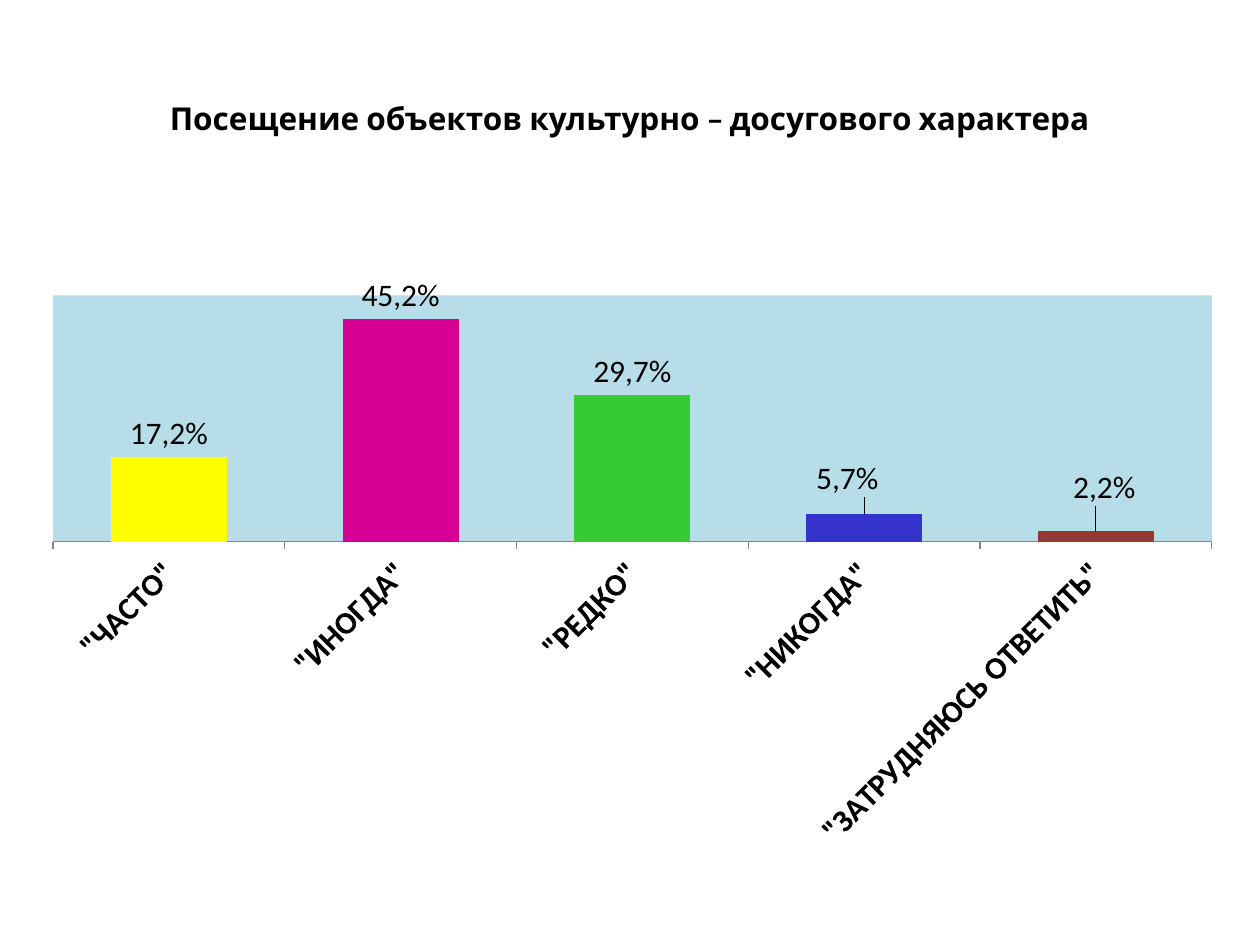
import pptx
import pptx.chart.data
import pptx.dml.color
import pptx.enum.chart
import pptx.enum.text
import pptx.oxml
import pptx.oxml.ns
import pptx.util

COLOURS = {
    "text": "000000",
    "axis": "868686",
    "plot": "B7DEE8",
    "series": "4F81BD",
}
ANSWERS = [
    ('"ЧАСТО"', 0.172, "FFFF00", None),
    ('"ИНОГДА"', 0.452, "D60093", None),
    ('"РЕДКО"', 0.297, "33CC33", None),
    ('"НИКОГДА"', 0.057, "3333CC", (-0.014, -0.02)),
    ('"ЗАТРУДНЯЮСЬ ОТВЕТИТЬ"', 0.022, "953735", (0.007, -0.034)),
]


class SlideBuilder:
    """Holds the style and the current slide, placing elements by shares of its size."""

    def __init__(self, presentation):
        self.width = presentation.slide_width
        self.height = presentation.slide_height
        self.slide = presentation.slides.add_slide(presentation.slide_layouts[5])

    def place(self, left, top, width, height):
        return (int(left * self.width), int(top * self.height),
                int(width * self.width), int(height * self.height))

    def colour(self, value):
        return pptx.dml.color.RGBColor.from_string(value)

    def fill(self, format, value):
        format.fill.solid()
        format.fill.fore_color.rgb = self.colour(value)

    def style(self, font, name, size, bold):
        font.name = name
        font.size = pptx.util.Pt(size)
        font.bold = bold
        font.color.rgb = self.colour(COLOURS["text"])

    def title(self, text, area):
        shape = self.slide.shapes.title
        shape.left, shape.top, shape.width, shape.height = self.place(*area)
        text_frame = shape.text_frame
        text_frame.text = text
        text_frame.vertical_anchor = pptx.enum.text.MSO_ANCHOR.MIDDLE
        paragraph = text_frame.paragraphs[0]
        paragraph.alignment = pptx.enum.text.PP_ALIGN.CENTER
        self.style(paragraph.runs[0].font, "Cabin", 18, True)

    def layout(self, x, y, width=None, height=None):
        values = {"x": x, "y": y}
        modes = ""
        if width is not None:
            values.update(w=width, h=height)
            modes = ('<c:layoutTarget val="inner"/>'
                     '<c:xMode val="edge"/><c:yMode val="edge"/>')
        lengths = "".join(f'<c:{key} val="{value}"/>' for key, value in values.items())
        namespace = pptx.oxml.ns.nsdecls("c")
        return pptx.oxml.parse_xml(
            f"<c:layout {namespace}><c:manualLayout>{modes}{lengths}"
            "</c:manualLayout></c:layout>")

    def plot_area(self, chart, area):
        plot_area = chart.element.xpath("c:chart/c:plotArea")[0]
        for layout in plot_area.xpath("c:layout"):
            plot_area.remove(layout)
        plot_area.insert(0, self.layout(*area))
        plot_area.append(pptx.oxml.parse_xml(
            f'<c:spPr {pptx.oxml.ns.nsdecls("c", "a")}><a:solidFill>'
            f'<a:srgbClr val="{COLOURS["plot"]}"/></a:solidFill></c:spPr>'))

    def axes(self, chart):
        category_axis, value_axis = chart.category_axis, chart.value_axis
        self.style(category_axis.tick_labels.font, "Calibri", 18, True)
        chart.element.xpath(".//c:catAx/c:txPr/a:bodyPr")[0].set("rot", "-2700000")
        category_axis.major_tick_mark = pptx.enum.chart.XL_TICK_MARK.OUTSIDE
        category_axis.format.line.color.rgb = self.colour(COLOURS["axis"])
        category_axis.has_major_gridlines = False
        value_axis.minimum_scale = 0
        value_axis.maximum_scale = 0.5
        value_axis.has_major_gridlines = False
        value_axis.tick_labels.number_format = "0.00%"
        value_axis.tick_labels.number_format_is_linked = False
        value_axis.visible = False

    def columns(self, answers, area, plot_area):
        data = pptx.chart.data.CategoryChartData(number_format="0.00%")
        data.categories = [answer[0] for answer in answers]
        data.add_series("Series 1", [answer[1] for answer in answers])
        chart = self.slide.shapes.add_chart(
            pptx.enum.chart.XL_CHART_TYPE.COLUMN_CLUSTERED, *self.place(*area), data).chart
        chart.has_title = False
        chart.has_legend = False
        self.style(chart.font, "Calibri", 10, False)
        self.axes(chart)
        self.plot_area(chart, plot_area)
        plot = chart.plots[0]
        plot.gap_width = 100
        plot.vary_by_categories = False
        series = plot.series[0]
        self.fill(series.format, COLOURS["series"])
        labels = series.data_labels
        labels.show_value = True
        labels.number_format = "0.00%"
        labels.number_format_is_linked = False
        self.style(labels.font, "Calibri", 18, True)
        for index, (_, value, colour, offset) in enumerate(answers):
            point = series.points[index]
            self.fill(point.format, colour)
            self.label(point, f"{value:.1%}".replace(".", ","))
            if offset:
                label = chart.element.xpath(f".//c:dLbl[c:idx/@val='{index}']")[0]
                label.insert(1, self.layout(*offset))

    def label(self, point, text):
        text_frame = point.data_label.text_frame
        text_frame.text = text
        self.style(text_frame.paragraphs[0].runs[0].font, "Calibri", 18, False)
        point.data_label.position = pptx.enum.chart.XL_LABEL_POSITION.OUTSIDE_END


def main():
    presentation = pptx.Presentation()
    presentation.slide_width = pptx.util.Inches(10)
    presentation.slide_height = pptx.util.Inches(7.5)
    builder = SlideBuilder(presentation)
    builder.title("Посещение объектов культурно – досугового характера",
                  (0, 0.04, 1, 0.17))
    builder.columns(ANSWERS, (0.023, 0.292, 0.958, 0.615), (0.02, 0.031, 0.96, 0.425))
    presentation.save("out.pptx")


if __name__ == "__main__":
    main()
